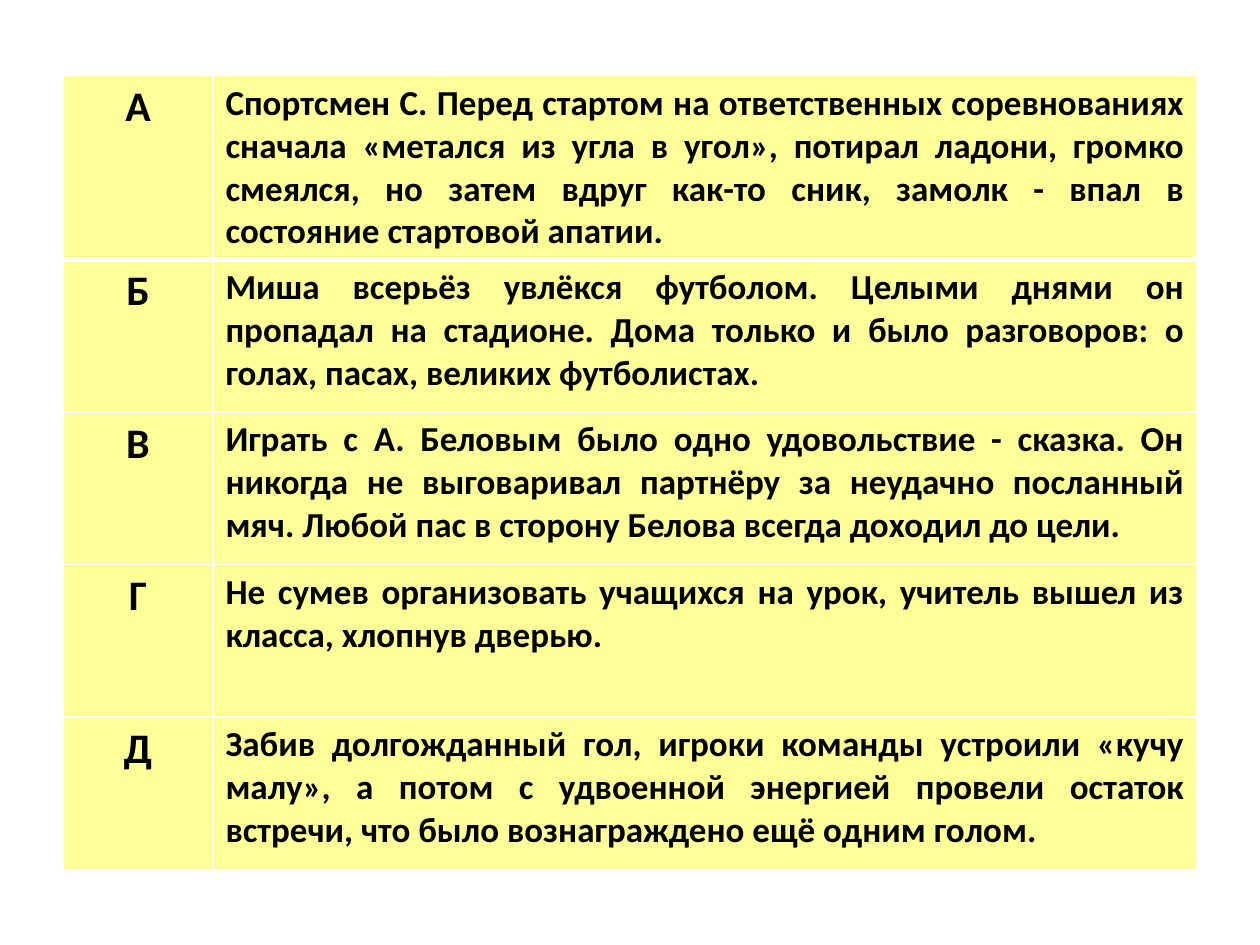
from dataclasses import dataclass

from lxml import etree
from pptx import Presentation
from pptx.dml.color import RGBColor
from pptx.enum.text import PP_ALIGN
from pptx.oxml.ns import qn
from pptx.util import Inches, Pt

CENTER = PP_ALIGN.CENTER
JUSTIFY = PP_ALIGN.JUSTIFY
BLANK_LAYOUT = 6

SITUATIONS = [
    ("А", "Спортсмен С. Перед стартом на ответственных соревнованиях сначала "
          "«метался из угла в угол», потирал ладони, громко смеялся, но затем "
          "вдруг как-то сник, замолк - впал в состояние стартовой апатии."),
    ("Б", "Миша всерьёз увлёкся футболом. Целыми днями он пропадал на стадионе. "
          "Дома только и было разговоров: о голах, пасах, великих футболистах."),
    ("В", "Играть с А. Беловым было одно удовольствие - сказка. Он никогда не "
          "выговаривал партнёру за неудачно посланный мяч. Любой пас в сторону "
          "Белова всегда доходил до цели."),
    ("Г", "Не сумев организовать учащихся на урок, учитель вышел из класса, "
          "хлопнув дверью."),
    ("Д", "Забив долгожданный гол, игроки команды устроили «кучу малу», а потом "
          "с удвоенной энергией провели остаток встречи, что было вознаграждено "
          "ещё одним голом."),
]


@dataclass(frozen=True)
class Theme:
    font: str = "Calibri"
    ink: str = "000000"
    cell_fill: str = "FFFF99"
    border: str = "FFFFFF"
    letter_size: int = 24
    story_size: int = 20
    thin: int = 1
    thick: int = 3


class SlideBuilder:
    def __init__(self, slide, theme):
        self.slide = slide
        self.theme = theme

    def table(self, rows, left, top, column_widths, row_height):
        """Add a lettered table with a thick rule under its first row."""
        theme = self.theme
        frame = self.slide.shapes.add_table(
            len(rows), len(column_widths), Inches(left), Inches(top),
            Inches(sum(column_widths)), Inches(row_height * len(rows)))
        table = frame.table
        table.first_row = False
        table.horz_banding = False
        for column, width in zip(table.columns, column_widths):
            column.width = Inches(width)
        for index, (letter, story) in enumerate(rows):
            table.rows[index].height = Inches(row_height)
            bottom = theme.thick if index == 0 else theme.thin
            self.cell(table.cell(index, 0), letter, theme.letter_size, CENTER, bottom)
            self.cell(table.cell(index, 1), story, theme.story_size, JUSTIFY, bottom)

    def cell(self, cell, text, size, alignment, bottom_width):
        self.borders(cell, bottom_width)
        cell.fill.solid()
        cell.fill.fore_color.rgb = RGBColor.from_string(self.theme.cell_fill)
        paragraph = cell.text_frame.paragraphs[0]
        paragraph.alignment = alignment
        run = paragraph.add_run()
        run.text = text
        run.font.name = self.theme.font
        run.font.size = Pt(size)
        run.font.bold = True
        run.font.color.rgb = RGBColor.from_string(self.theme.ink)

    def borders(self, cell, bottom_width):
        """Draw the four cell borders; call before filling to keep the XML order."""
        properties = cell._tc.get_or_add_tcPr()
        thin = self.theme.thin
        widths = {"a:lnL": thin, "a:lnR": thin, "a:lnT": thin, "a:lnB": bottom_width}
        for tag, width in widths.items():
            line = etree.SubElement(properties, qn(tag), w=str(Pt(width)))
            fill = etree.SubElement(line, qn("a:solidFill"))
            etree.SubElement(fill, qn("a:srgbClr"), val=self.theme.border)


def main():
    presentation = Presentation()
    presentation.slide_width = Inches(10)
    presentation.slide_height = Inches(7.5)
    slide = presentation.slides.add_slide(presentation.slide_layouts[BLANK_LAYOUT])
    builder = SlideBuilder(slide, Theme())
    builder.table(SITUATIONS, left=0.5, top=0.6,
                  column_widths=(1.19, 7.81), row_height=1.21)
    presentation.save("out.pptx")


if __name__ == "__main__":
    main()
